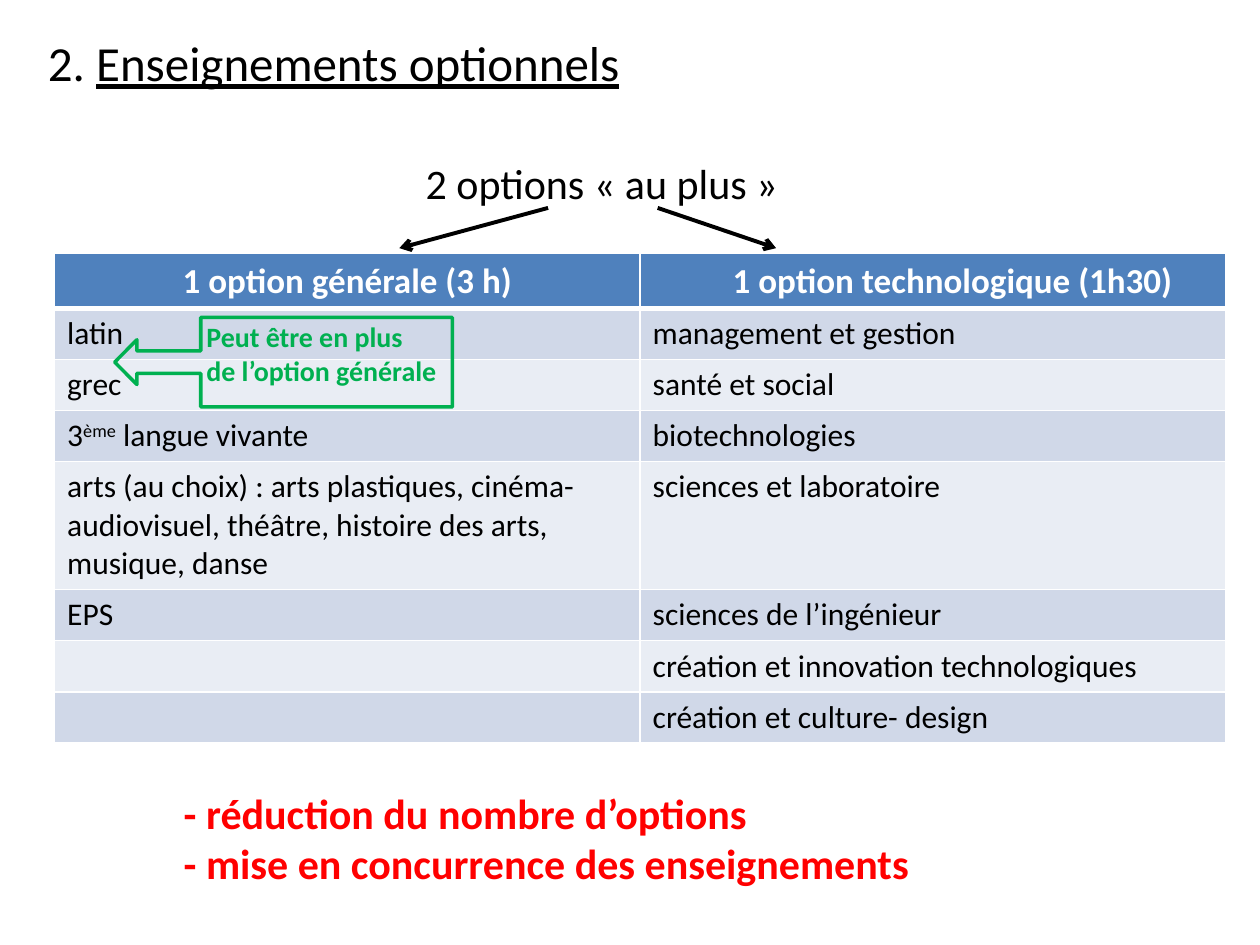
from lxml import etree
from pptx import Presentation
from pptx.dml.color import RGBColor
from pptx.enum.shapes import MSO_CONNECTOR, MSO_SHAPE
from pptx.enum.text import MSO_ANCHOR, MSO_AUTO_SIZE, PP_ALIGN
from pptx.oxml.ns import qn
from pptx.util import Pt

COLORS = {
    "black": "000000", "white": "FFFFFF", "red": "FF0000", "green": "00B050",
    "header": "4F81BD", "odd": "D0D8E8", "even": "E9EDF4",
}


def add_run(paragraph, text, size, color="black", bold=False):
    run = paragraph.add_run()
    run.text = text
    run.font.name = "Calibri"
    run.font.size = Pt(size)
    run.font.bold = bold
    run.font.color.rgb = RGBColor.from_string(COLORS[color])
    return run


def add_border(cell, side, width):
    line = etree.SubElement(cell._tc.get_or_add_tcPr(), qn(f"a:{side}"), w=str(Pt(width)))
    fill = etree.SubElement(line, qn("a:solidFill"))
    etree.SubElement(fill, qn("a:srgbClr"), val=COLORS["white"])


presentation = Presentation()
presentation.slide_width, presentation.slide_height = Pt(720), Pt(540)
slide = presentation.slides.add_slide(presentation.slide_layouts[5])

title = slide.shapes.title
title.left, title.top, title.width, title.height = Pt(20.2), Pt(15.1), Pt(396.7), Pt(41)
title.text_frame.vertical_anchor = MSO_ANCHOR.TOP
title.text_frame.auto_size = MSO_AUTO_SIZE.SHAPE_TO_FIT_TEXT
title_paragraph = title.text_frame.paragraphs[0]
title_paragraph.alignment = PP_ALIGN.LEFT
add_run(title_paragraph, "2. ", 28)
add_run(title_paragraph, "Enseignements optionnels", 28).font.underline = True

rows = [
    ("1 option générale (3 h)", "1 option technologique (1h30)"),
    ("latin", "management et gestion"),
    ("grec", "santé et social"),
    ("3^ème^ langue vivante", "biotechnologies"),
    ("arts (au choix) : arts plastiques, cinéma-audiovisuel, théâtre, "
     "histoire des arts, musique, danse", "sciences et laboratoire"),
    ("EPS", "sciences de l’ingénieur"),
    ("", "création et innovation technologiques"),
    ("", "création et culture- design"),
]
row_heights = [31.2, 29.2, 29.2, 29.2, 73.2, 29.2, 29.2, 29.2]
table = slide.shapes.add_table(len(rows), 2, Pt(31.2), Pt(144.9), Pt(669.2), Pt(sum(row_heights))).table
for column in table.columns:
    column.width = Pt(334.6)
for row_index, (texts, height) in enumerate(zip(rows, row_heights)):
    table.rows[row_index].height = Pt(height)
    is_header = row_index == 0
    fill_color = "header" if is_header else "odd" if row_index % 2 else "even"
    for column_index, text in enumerate(texts):
        cell = table.cell(row_index, column_index)
        paragraph = cell.text_frame.paragraphs[0]
        if is_header:
            paragraph.alignment = PP_ALIGN.CENTER
        for part_index, part in enumerate(text.split("^")):
            if part:
                run = add_run(paragraph, part, 20 if is_header else 18,
                              "white" if is_header else "black", is_header)
                if part_index == 1:
                    run._r.get_or_add_rPr().set("baseline", "30000")
        for side in ("lnL", "lnR", "lnT", "lnB"):
            thick = (row_index, side) in ((0, "lnB"), (1, "lnT"))
            add_border(cell, side, 3 if thick else 1)
        cell.fill.solid()
        cell.fill.fore_color.rgb = RGBColor.from_string(COLORS[fill_color])
table.cell(0, 1).margin_left = Pt(29.8)

text_boxes = [
    ((208.8, 86.4, 694.8, 36), 34.4, 24, "black", False, ["2 options «\u00a0au plus\u00a0»"]),
    ((110.9, 179.3, 149, 46), 7.2, 16, "green", True, ["Peut être en plus", "de l’option générale"]),
    ((97.9, 446.4, 568, 65.5), 7.2, 24, "red", True,
     ["- réduction du nombre d’options", "- mise en concurrence des enseignements"]),
]
for box, margin_left, size, color, bold, lines in text_boxes:
    text_frame = slide.shapes.add_textbox(*map(Pt, box)).text_frame
    text_frame.word_wrap = True
    text_frame.auto_size = MSO_AUTO_SIZE.SHAPE_TO_FIT_TEXT
    text_frame.margin_left = Pt(margin_left)
    for line_index, text in enumerate(lines):
        paragraph = text_frame.add_paragraph() if line_index else text_frame.paragraphs[0]
        add_run(paragraph, text, size, color, bold)

for start_x, end_x in ((313.2, 228.2), (375.8, 443.5)):
    arrow = slide.shapes.add_connector(
        MSO_CONNECTOR.STRAIGHT, Pt(start_x), Pt(118.8), Pt(end_x), Pt(141.8))
    arrow.line.color.rgb = RGBColor.from_string(COLORS["black"])
    arrow.line.width = Pt(2.25)
    etree.SubElement(arrow.line._get_or_add_ln(), qn("a:tailEnd"), type="arrow")
    etree.SubElement(arrow._element.spPr, qn("a:effectLst"))

callout = slide.shapes.add_shape(
    MSO_SHAPE.LEFT_ARROW_CALLOUT, Pt(65.5), Pt(181.4), Pt(193), Pt(51.1))
callout.shadow.inherit = False
callout.adjustments[3] = 0.745
callout.fill.background()
callout.line.color.rgb = RGBColor.from_string(COLORS["green"])
callout.line.width = Pt(2)

presentation.save("out.pptx")
